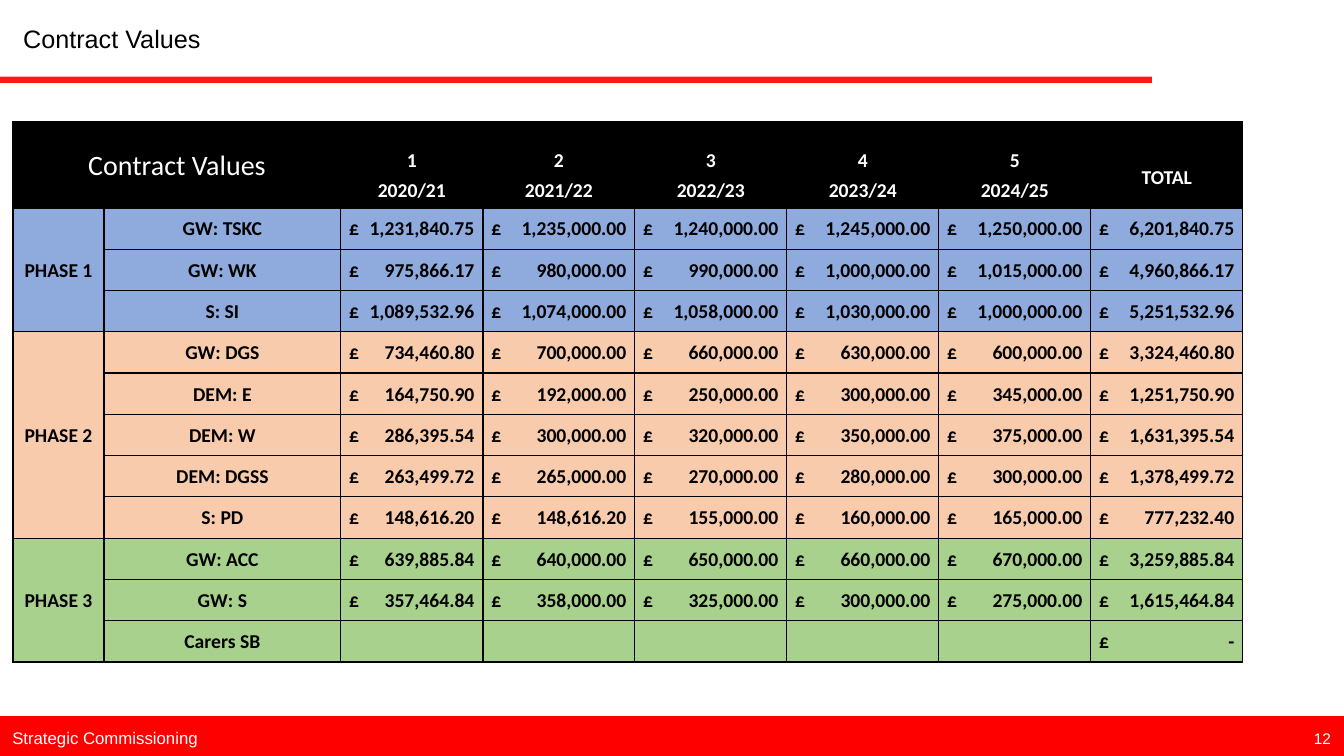
from lxml import etree
from pptx import Presentation
from pptx import util as u
from pptx.dml.color import RGBColor
from pptx.enum import shapes, text
from pptx.oxml import parse_xml
from pptx.oxml.ns import nsdecls, qn

COLS = [2.29, 5.97, 3.58] + [3.83] * 5
ROWS = [0.64, 0.64, 0.89] + [1.04] * 11
YEARS = ["2020/21", "2021/22", "2022/23", "2023/24", "2024/25"]
INSET = 0.21
PHASES = [
    ("PHASE 1", "8FAADC", [
        ("GW: TSKC", [1231840.75, 1235000, 1240000, 1245000, 1250000]),
        ("GW: WK", [975866.17, 980000, 990000, 1000000, 1015000]),
        ("S: SI", [1089532.96, 1074000, 1058000, 1030000, 1000000])]),
    ("PHASE 2", "F8CBAD", [
        ("GW: DGS", [734460.80, 700000, 660000, 630000, 600000]),
        ("DEM: E", [164750.90, 192000, 250000, 300000, 345000]),
        ("DEM: W", [286395.54, 300000, 320000, 350000, 375000]),
        ("DEM: DGSS", [263499.72, 265000, 270000, 280000, 300000]),
        ("S: PD", [148616.20, 148616.20, 155000, 160000, 165000])]),
    ("PHASE 3", "A9D18E", [
        ("GW: ACC", [639885.84, 640000, 650000, 660000, 670000]),
        ("GW: S", [357464.84, 358000, 325000, 300000, 275000]),
        ("Carers SB", [])]),
]


def rgb(value):
    """Turn a hex string into a colour."""
    return RGBColor.from_string(value)


def add_text(p, content, color, **fmt):
    """Add a run to a paragraph with the given font values."""
    r = p.add_run()
    r.text = content
    for name, value in fmt.items():
        setattr(r.font, name, value)
    r.font.color.rgb = rgb(color)


def set_frame(tf, **fmt):
    """Set attributes of a text frame."""
    for name, value in fmt.items():
        setattr(tf, name, value)


def add_title(s, content):
    """Place and format the slide title."""
    sp = s.shapes.title
    place = dict(left=0.33, top=0.53, width=16.61, height=0.99)
    for name, value in place.items():
        setattr(sp, name, u.Cm(value))
    set_frame(sp.text_frame, vertical_anchor=text.MSO_ANCHOR.MIDDLE,
              auto_size=text.MSO_AUTO_SIZE.NONE, word_wrap=True)
    p = sp.text_frame.paragraphs[0]
    for name, value in dict(alignment=text.PP_ALIGN.LEFT, line_spacing=0.9,
                            space_after=u.Pt(6)).items():
        setattr(p, name, value)
    add_text(p, content, "000000", size=u.Pt(18), name="Arial")


def add_label(s, box, content, size):
    """Add a white one-line label."""
    sp = s.shapes.add_textbox(*map(u.Cm, box))
    set_frame(sp.text_frame, word_wrap=True, vertical_anchor=text.MSO_ANCHOR.MIDDLE)
    add_text(sp.text_frame.paragraphs[0], content, "FFFFFF", size=u.Pt(size), name="Arial")


def add_band(s, box, color):
    """Add a filled rectangle."""
    sp = s.shapes.add_shape(shapes.MSO_SHAPE.RECTANGLE, *map(u.Cm, box))
    sp.shadow.inherit = False
    sp.fill.solid()
    sp.fill.fore_color.rgb = rgb(color)
    sp.line.color.rgb = rgb(color)
    sp.line.width = u.Pt(1)


def add_rule(s, ends, color, width, opacity):
    """Add a straight, slightly transparent line."""
    cn = s.shapes.add_connector(shapes.MSO_CONNECTOR.STRAIGHT, *map(u.Cm, ends))
    cn.line.color.rgb = rgb(color)
    cn.line.width = u.Pt(width)
    clr = next(cn.line._ln.iter(qn("a:srgbClr")))
    etree.SubElement(clr, qn("a:alpha")).set("val", str(opacity * 1000))
    etree.SubElement(cn._element.spPr, qn("a:effectLst"))


def style_cell(cell, color):
    """Give a cell its fill, insets and black borders."""
    cell.fill.solid()
    cell.fill.fore_color.rgb = rgb(color)
    cell.vertical_anchor = text.MSO_ANCHOR.MIDDLE
    for side in ("left", "right", "top"):
        setattr(cell, f"margin_{side}", u.Cm(0.03))
    cell.margin_bottom = 0
    tc_pr = cell._tc.get_or_add_tcPr()
    for i, side in enumerate("LRTB"):
        tc_pr.insert(i, parse_xml(
            f'<a:ln{side} {nsdecls("a")} w="12700"><a:solidFill>'
            f'<a:srgbClr val="000000"/></a:solidFill></a:ln{side}>'))
    end = etree.SubElement(cell.text_frame.paragraphs[0]._p, qn("a:endParaRPr"))
    end.set("sz", "1400")


def fill_cell(cell, content, color="000000", size=14, bold=True):
    """Write centred text in a cell."""
    p = cell.text_frame.paragraphs[0]
    p.alignment = text.PP_ALIGN.CENTER
    add_text(p, content, color, size=u.Pt(size), bold=bold, name="Calibri")


def fill_money(cell, amount, width):
    """Write a pound sign at the left and the amount at a right tab."""
    cell.margin_left = u.Cm(INSET)
    p = cell.text_frame.paragraphs[0]
    p.alignment = text.PP_ALIGN.LEFT
    tabs = etree.SubElement(p._p.get_or_add_pPr(), qn("a:tabLst"))
    tab = etree.SubElement(tabs, qn("a:tab"))
    tab.set("pos", str(u.Cm(width - 2 * INSET)))
    tab.set("algn", "r")
    value = f"{amount:,.2f}" if amount else "-"
    add_text(p, f"£\t{value}", "000000", size=u.Pt(14), bold=True, name="Calibri")


def fill_header(tb):
    """Fill the three header rows."""
    for row in range(3):
        for col in range(len(COLS)):
            style_cell(tb.cell(row, col), "000000")
    tb.cell(0, 0).merge(tb.cell(2, 1))
    tb.cell(1, 7).merge(tb.cell(2, 7))
    fill_cell(tb.cell(0, 0), "Contract Values", "FFFFFF", 20, False)
    fill_cell(tb.cell(1, 7), "TOTAL", "FFFFFF")
    for i, year in enumerate(YEARS):
        fill_cell(tb.cell(1, i + 2), str(i + 1), "FFFFFF")
        fill_cell(tb.cell(2, i + 2), year, "FFFFFF")


def fill_phase(tb, top, phase, color, contracts):
    """Fill the rows of one phase."""
    for row, (name, amounts) in enumerate(contracts, top):
        for col in range(len(COLS)):
            style_cell(tb.cell(row, col), color)
        fill_cell(tb.cell(row, 1), name)
        for col, amount in enumerate(amounts, 2):
            fill_money(tb.cell(row, col), amount, COLS[col])
        fill_money(tb.cell(row, 7), sum(amounts), COLS[7])
    tb.cell(top, 0).merge(tb.cell(top + len(contracts) - 1, 0))
    fill_cell(tb.cell(top, 0), phase)


def add_contracts(s):
    """Add the table of contract values."""
    box = (0.33, 3.07, sum(COLS), sum(ROWS))
    tb = s.shapes.add_table(len(ROWS), len(COLS), *map(u.Cm, box)).table
    tb.first_row = tb.horz_banding = False
    for column, width in zip(tb.columns, COLS):
        column.width = u.Cm(width)
    for row, height in zip(tb.rows, ROWS):
        row.height = u.Cm(height)
    fill_header(tb)
    top = 3
    for phase, color, contracts in PHASES:
        fill_phase(tb, top, phase, color, contracts)
        top += len(contracts)


def main():
    """Build and save the slide."""
    prs = Presentation()
    prs.slide_width, prs.slide_height = u.Cm(33.87), u.Cm(19.05)
    s = prs.slides.add_slide(prs.slide_layouts[5])
    add_band(s, (0, 18.06, 33.87, 0.99), "FF0000")
    add_rule(s, (0, 2.01, 29.03, 2.01), "FF0000", 4.5, 90)
    add_label(s, (0.06, 18.09, 5.92, 1.02), "Strategic Commissioning", 12)
    add_label(s, (32.86, 18.24, 1.01, 0.73), "12", 11)
    add_title(s, "Contract Values")
    add_contracts(s)
    prs.save("out.pptx")


if __name__ == "__main__":
    main()
